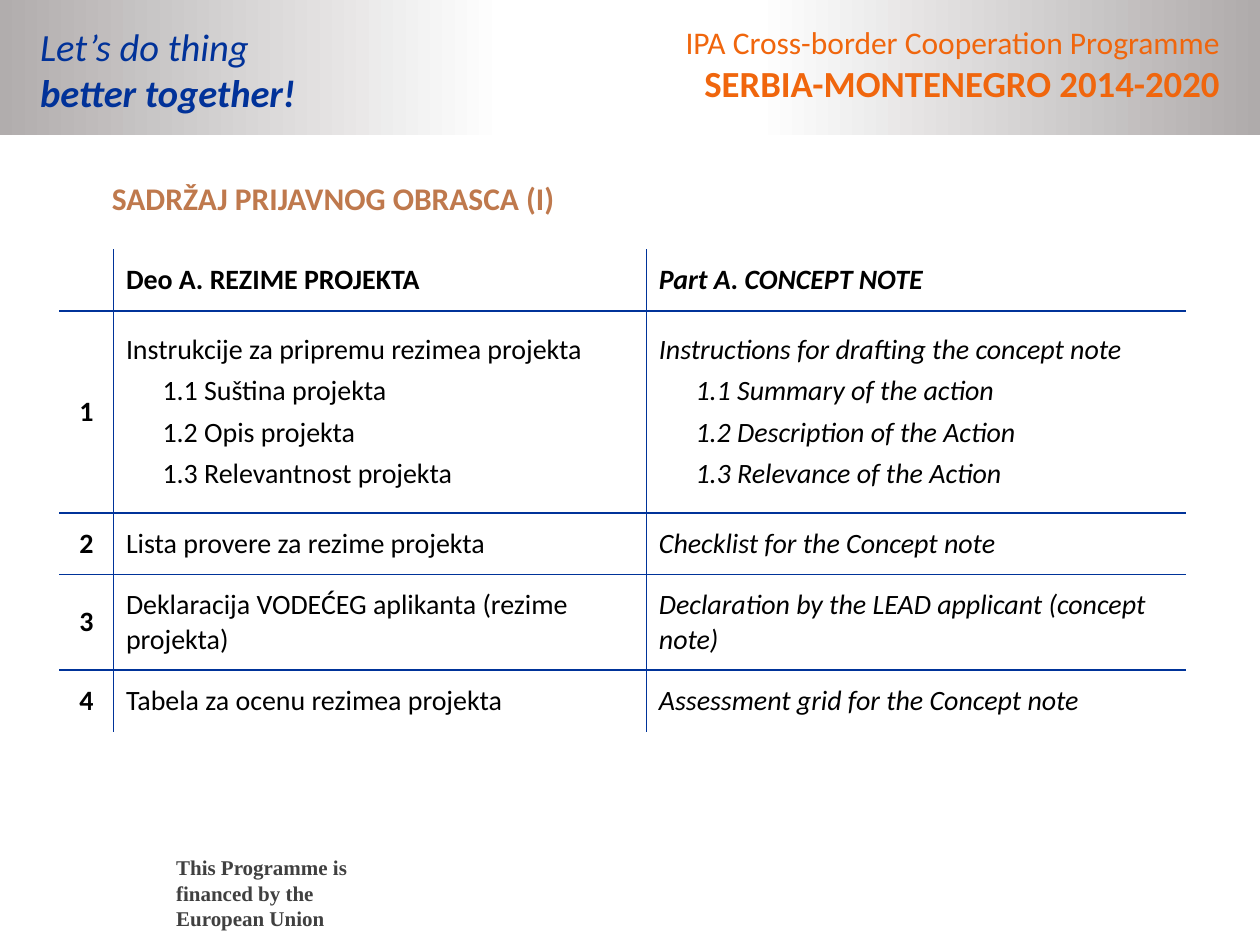
from lxml import etree
from pptx import Presentation
from pptx.dml.color import RGBColor
from pptx.enum.shapes import MSO_SHAPE
from pptx.enum.text import MSO_ANCHOR, PP_ALIGN
from pptx.oxml import parse_xml
from pptx.oxml.ns import nsdecls, qn
from pptx.util import Inches, Pt

COLORS = {
    "blue": "013299", "orange": "F0660D", "brown": "BF794D", "grey": "404040",
    "black": "000000", "rule": "003399",
    "band_left": "B1ADAD", "band_right": "AFABAB", "white": "FFFFFF",
}


def style(p, size, color, bold=False, italic=False, font="Calibri", align=PP_ALIGN.LEFT):
    p.alignment = align
    p.font.name, p.font.size = font, Pt(size)
    p.font.bold, p.font.italic = bold, italic
    p.font.color.rgb = RGBColor.from_string(COLORS[color])


def add_text(box, lines, anchor=MSO_ANCHOR.TOP):
    """Add a text box; each line is (text, style options)."""
    tf = s.shapes.add_textbox(*[Inches(v) for v in box]).text_frame
    tf.word_wrap = True
    tf.vertical_anchor = anchor
    for i, (text, options) in enumerate(lines):
        p = tf.add_paragraph() if i else tf.paragraphs[0]
        p.text = text
        style(p, **options)


prs = Presentation()
prs.slide_width, prs.slide_height = Inches(10), Inches(7.5)
s = prs.slides.add_slide(prs.slide_layouts[6])

# Funding note
add_text((1.3, 6.73, 1.56, 0.71), [
    ("This Programme is financed by the European Union",
     dict(size=12, color="grey", bold=True, font="Times New Roman")),
], MSO_ANCHOR.MIDDLE)

# Header band, grey at both ends
band = s.shapes.add_shape(MSO_SHAPE.RECTANGLE, 0, 0, prs.slide_width, Inches(1.07))
band.shadow.inherit = False
band.line.fill.background()
band.fill.gradient()
grad = band.fill._xPr.find(qn("a:gradFill"))
stops = grad.find(qn("a:gsLst"))
for stop in list(stops):
    stops.remove(stop)
for pos, color in [(0, "band_right"), (40, "white"), (60, "white"), (100, "band_left")]:
    stop = etree.SubElement(stops, qn("a:gs"), pos=str(pos * 1000))
    etree.SubElement(stop, qn("a:srgbClr"), val=COLORS[color])
grad.find(qn("a:lin")).set("ang", str(180 * 60000))

# Header texts
add_text((0.22, 0.13, 4.34, 0.84), [
    ("Let’s do thing", dict(size=22, color="blue", italic=True)),
    ("better together!", dict(size=22, color="blue", bold=True, italic=True)),
])
add_text((5.28, 0.13, 4.5, 0.76), [
    ("IPA Cross-border Cooperation Programme",
     dict(size=18, color="orange", align=PP_ALIGN.RIGHT)),
    ("SERBIA-MONTENEGRO 2014-2020",
     dict(size=21, color="orange", bold=True, align=PP_ALIGN.RIGHT)),
])

# Contents table: number, Serbian, English; later lines in a cell are indented
rows = [
    ("", ["Deo A. REZIME PROJEKTA"], ["Part A. CONCEPT NOTE"]),
    ("1",
     ["Instrukcije za pripremu rezimea projekta", "1.1 Suština projekta",
      "1.2 Opis projekta", "1.3 Relevantnost projekta"],
     ["Instructions for drafting the concept note", "1.1 Summary of the action",
      "1.2 Description of the Action", "1.3 Relevance of the Action"]),
    ("2", ["Lista provere za rezime projekta"], ["Checklist for the Concept note"]),
    ("3", ["Deklaracija VODEĆEG aplikanta (rezime projekta)"],
     ["Declaration by the LEAD applicant (concept note)"]),
    ("4", ["Tabela za ocenu rezimea projekta"], ["Assessment grid for the Concept note"]),
]
widths = [0.43, 4.23, 4.28]
heights = [0.49, 1.6, 0.49, 0.76, 0.49]
table = s.shapes.add_table(len(rows), len(widths), Inches(0.47), Inches(1.98),
                           Inches(sum(widths)), Inches(sum(heights))).table
table.first_row = table.horz_banding = False
for column, width in zip(table.columns, widths):
    column.width = Inches(width)
for row, height in zip(table.rows, heights):
    row.height = Inches(height)

for r, texts in enumerate(rows):
    for c, lines in enumerate(texts):
        cell = table.cell(r, c)
        cell.vertical_anchor = MSO_ANCHOR.MIDDLE
        tf = cell.text_frame
        for i, text in enumerate(lines or [""]):
            p = tf.add_paragraph() if i else tf.paragraphs[0]
            p.text = text
            p.space_after = Pt(4)
            if i:
                p._p.get_or_add_pPr().set("marL", str(Inches(0.29)))
            style(p, 16, "black", bold=r == 0 or c == 0, italic=c == 2,
                  align=PP_ALIGN.LEFT if c else PP_ALIGN.CENTER)
        # Rules between cells only, none on the outer edge
        inner = {"lnL": c > 0, "lnR": c < len(widths) - 1,
                 "lnT": r > 0, "lnB": r < len(rows) - 1}
        tcPr = cell._tc.get_or_add_tcPr()
        for side, ruled in inner.items():
            fill = (f'<a:solidFill><a:srgbClr val="{COLORS["rule"]}"/></a:solidFill>'
                    if ruled else "<a:noFill/>")
            tcPr.append(parse_xml(
                f'<a:{side} {nsdecls("a")} w="{Pt(1)}">{fill}</a:{side}>'))
        cell.fill.background()

# Title
add_text((0.79, 1.37, 8.5, 0.4), [
    ("SADRŽAJ PRIJAVNOG OBRASCA (I)", dict(size=18, color="brown", bold=True)),
])

prs.save("out.pptx")
